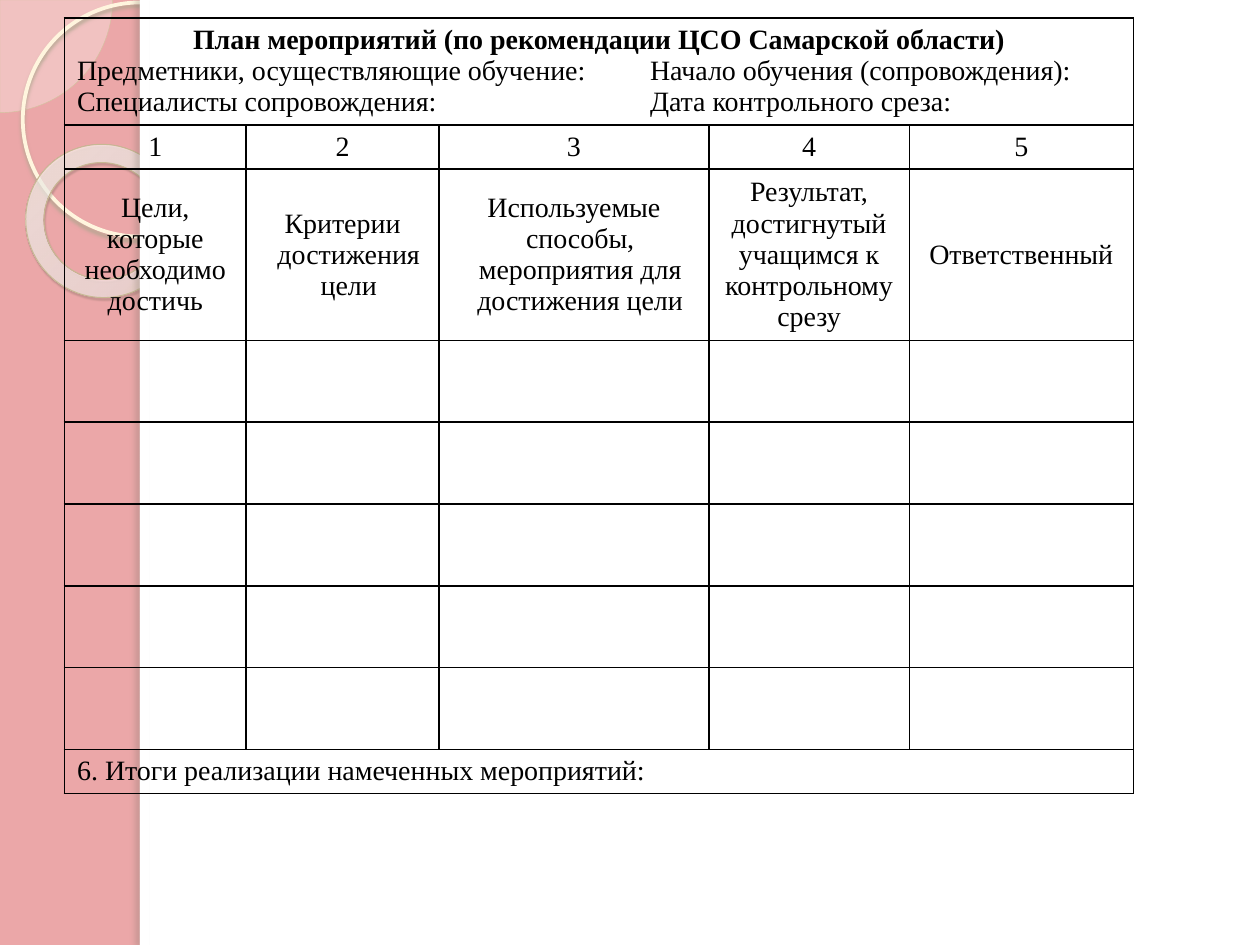
from dataclasses import dataclass

import lxml.etree
import pptx
import pptx.dml.color
import pptx.enum.shapes
import pptx.enum.text
import pptx.oxml
import pptx.oxml.ns
import pptx.util

Cm, Pt = pptx.util.Cm, pptx.util.Pt
qn = pptx.oxml.ns.qn
SHAPE = pptx.enum.shapes.MSO_SHAPE
LEFT = pptx.enum.text.PP_ALIGN.LEFT
CENTER = pptx.enum.text.PP_ALIGN.CENTER
TOP = pptx.enum.text.MSO_ANCHOR.TOP
MIDDLE = pptx.enum.text.MSO_ANCHOR.MIDDLE
NAMESPACE = 'xmlns:a="http://schemas.openxmlformats.org/drawingml/2006/main"'


@dataclass(frozen=True)
class Theme:
    font: str = "Times New Roman"
    size: float = 16
    ink: str = "000000"
    page: str = "EBA7A8"
    panel: str = "FFFFFF"
    pie: str = "FEFAF4"
    pie_line: str = "D3C39F"
    ring: str = "FFF5DE"
    donut_line: str = "C7B893"
    donut_stops: tuple = ((0, "FFFCF6", 70), (70, "FFFEFB", 55), (100, "F0D28E", 60))
    ring_shadow: tuple = ("B0A68F", 85, 2, 2, 90)
    donut_shadow: tuple = ("5A5444", 35, 1, 1.2, 75)
    edge_shadow: tuple = ("736F63", 25, 3, 3, 180)


THEME = Theme()
COLUMNS = (3.66, 3.89, 5.44, 4.04, 4.52)
NUMBER_ROW, HEADING_ROW, BLANK_ROWS = 0.89, 3.45, 5
ROWS = (2.16, NUMBER_ROW, HEADING_ROW) + (1.65,) * BLANK_ROWS + (0.89,)
WIDE_HANG, NARROW_HANG = 0.97, 0.25
HEADINGS = (
    ("Цели, которые необходимо достичь", 0),
    ("Критерии достижения цели", NARROW_HANG),
    ("Используемые способы, мероприятия для достижения цели", NARROW_HANG),
    ("Результат,\nдостигнутый учащимся к контрольному срезу", 0),
    ("Ответственный", WIDE_HANG),
)


def rgb(value):
    return pptx.dml.color.RGBColor.from_string(value)


def color_xml(value, alpha=100):
    return f'<a:srgbClr val="{value}"><a:alpha val="{alpha * 1000}"/></a:srgbClr>'


def parse(xml):
    return pptx.oxml.parse_xml(xml.replace(">", f" {NAMESPACE}>", 1))


def add_decor(slide, kind, bounds, fill=None, alpha=100, line=None, width=0, shadow=None):
    shape = slide.shapes.add_shape(kind, *(Cm(value) for value in bounds))
    shape.shadow.inherit = False
    if fill:
        shape.fill.solid()
        shape.fill.fore_color.rgb = rgb(fill)
        solid = shape._element.spPr.find(qn("a:solidFill"))
        solid.getparent().replace(
            solid, parse(f"<a:solidFill>{color_xml(fill, alpha)}</a:solidFill>"))
    else:
        shape.fill.background()
    if line:
        shape.line.color.rgb = rgb(line)
        shape.line.width = Pt(width)
    else:
        shape.line.fill.background()
    if shadow:
        color, opacity, blur, distance, angle = shadow
        shape._element.spPr.find(qn("a:effectLst")).append(parse(
            f'<a:outerShdw blurRad="{Pt(blur)}" dist="{Pt(distance)}" '
            f'dir="{angle * 60000}" algn="tl" rotWithShape="0">'
            f"{color_xml(color, opacity)}</a:outerShdw>"))
    return shape


def set_radial_fill(shape, stops):
    stop_xml = "".join(f'<a:gs pos="{position * 1000}">{color_xml(color, alpha)}</a:gs>'
                       for position, color, alpha in stops)
    gradient = parse(
        f'<a:gradFill rotWithShape="1"><a:gsLst>{stop_xml}</a:gsLst><a:path path="circle">'
        '<a:fillToRect l="-408000" t="-50000" r="508000" b="150000"/></a:path></a:gradFill>')
    old_fill = shape._element.spPr.find(qn("a:noFill"))
    old_fill.getparent().replace(old_fill, gradient)


def add_backdrop(slide):
    slide.background.fill.solid()
    slide.background.fill.fore_color.rgb = rgb(THEME.page)
    pie = add_decor(slide, SHAPE.PIE, (-2.27, -2.27, 4.54, 4.54), fill=THEME.pie,
                    alpha=33, line=THEME.pie_line, width=0.25)
    pie.adjustments[0], pie.adjustments[1] = 0, 54.02
    add_decor(slide, SHAPE.OVAL, (0.46, 0.05, 4.72, 4.72), line=THEME.ring,
              width=2.15, shadow=THEME.ring_shadow)
    donut = add_decor(slide, SHAPE.DONUT, (0.51, 2.92, 3.12, 3.07),
                      line=THEME.donut_line, width=0.58, shadow=THEME.donut_shadow)
    donut.adjustments[0] = 0.12
    donut.rotation = 38.6
    set_radial_fill(donut, THEME.donut_stops)
    add_decor(slide, SHAPE.RECTANGLE, (2.82, 0, 22.58, 19.05), fill=THEME.panel)
    add_decor(slide, SHAPE.RECTANGLE, (2.82, 0, 0.2, 19.05), fill=THEME.panel,
              shadow=THEME.edge_shadow)


def write(cell, text, align=LEFT, anchor=TOP, bold=False, hang=0, tab=None):
    """Fill the cell, one paragraph a line, after any text it already holds."""
    cell.vertical_anchor = anchor
    frame = cell.text_frame
    for line in text.split("\n"):
        first = frame.paragraphs[0]
        para = frame.add_paragraph() if first.runs else first
        para.alignment = align
        properties = para._p.get_or_add_pPr()
        if hang:
            properties.set("marL", str(Cm(hang)))
            properties.set("indent", str(-Cm(hang)))
        if tab:
            properties.append(parse(
                f'<a:tabLst><a:tab pos="{Cm(tab)}" algn="l"/></a:tabLst>'))
        span = para.add_run()
        span.text = line
        span.font.name = THEME.font
        span.font.size = Pt(THEME.size)
        span.font.bold = bold
        span.font.color.rgb = rgb(THEME.ink)


def style_cell(cell):
    properties = cell._tc.get_or_add_tcPr()
    for side in ("lnL", "lnR", "lnT", "lnB"):
        properties.append(parse(
            f'<a:{side} w="{Pt(1)}"><a:solidFill>{color_xml(THEME.ink)}</a:solidFill></a:{side}>'))
    cell.fill.background()


def add_plan_table(slide):
    frame = slide.shapes.add_table(len(ROWS), len(COLUMNS), Cm(1.3), Cm(0.36),
                                   Cm(sum(COLUMNS)), Cm(sum(ROWS)))
    table = frame.table
    table.first_row = table.horz_banding = False
    for column, width in zip(table.columns, COLUMNS):
        column.width = Cm(width)
    for row, height in zip(table.rows, ROWS):
        row.height = Cm(height)
    for cell in table.iter_cells():
        style_cell(cell)
    last_row, last_column = len(ROWS) - 1, len(COLUMNS) - 1
    for row in (0, last_row):
        table.cell(row, 0).merge(table.cell(row, last_column))
    return table


def fill_plan_table(table):
    header = table.cell(0, 0)
    write(header, "План мероприятий (по рекомендации ЦСО Самарской области)",
          align=CENTER, bold=True)
    write(header, "Предметники, осуществляющие обучение:\tНачало обучения (сопровождения):\n"
                  "Специалисты сопровождения:\tДата контрольного среза:", tab=11.55)
    for index, (heading, hang) in enumerate(HEADINGS):
        write(table.cell(1, index), str(index + 1), align=CENTER, hang=WIDE_HANG)
        write(table.cell(2, index), heading, align=CENTER, anchor=MIDDLE, hang=hang)
    write(table.cell(len(ROWS) - 1, 0), "6. Итоги реализации намеченных мероприятий:",
          hang=WIDE_HANG)


def main():
    deck = pptx.Presentation()
    deck.slide_width, deck.slide_height = Cm(25.4), Cm(19.05)
    slide = deck.slides.add_slide(deck.slide_layouts[6])
    add_backdrop(slide)
    fill_plan_table(add_plan_table(slide))
    deck.save("out.pptx")


if __name__ == "__main__":
    main()
